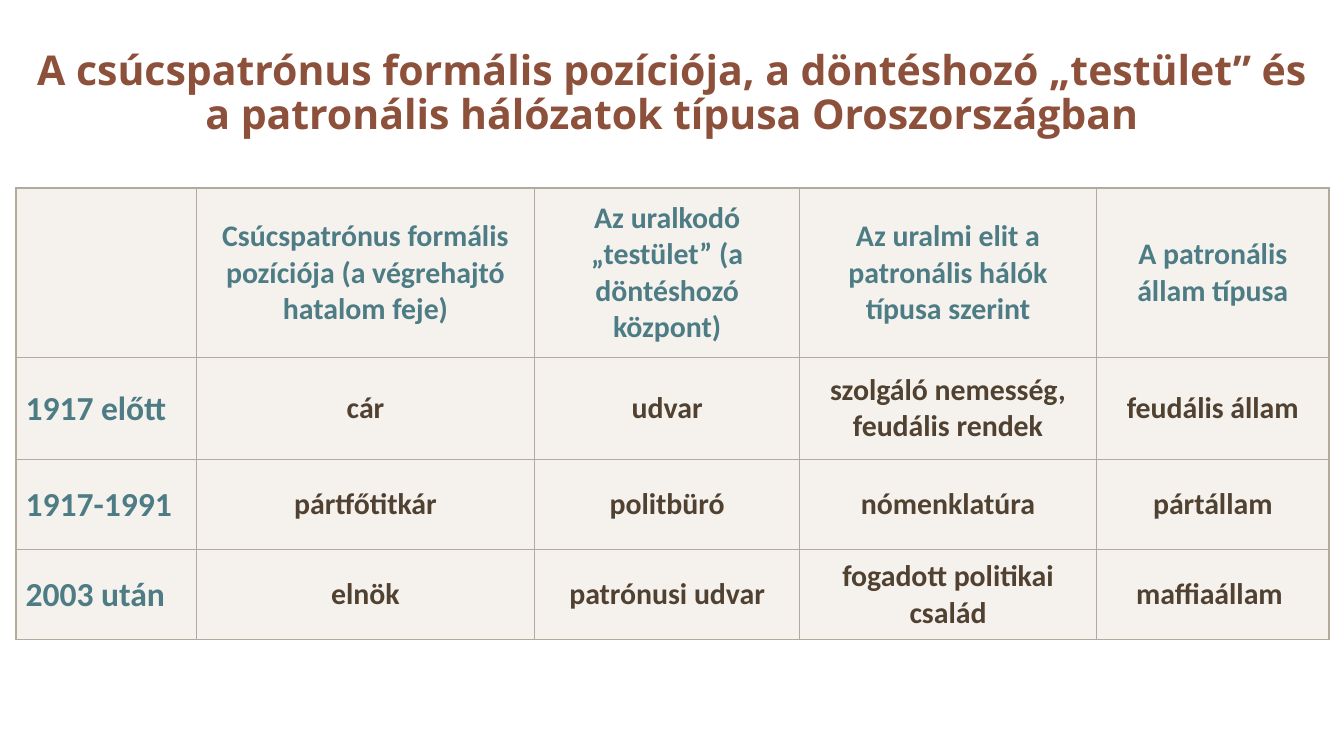
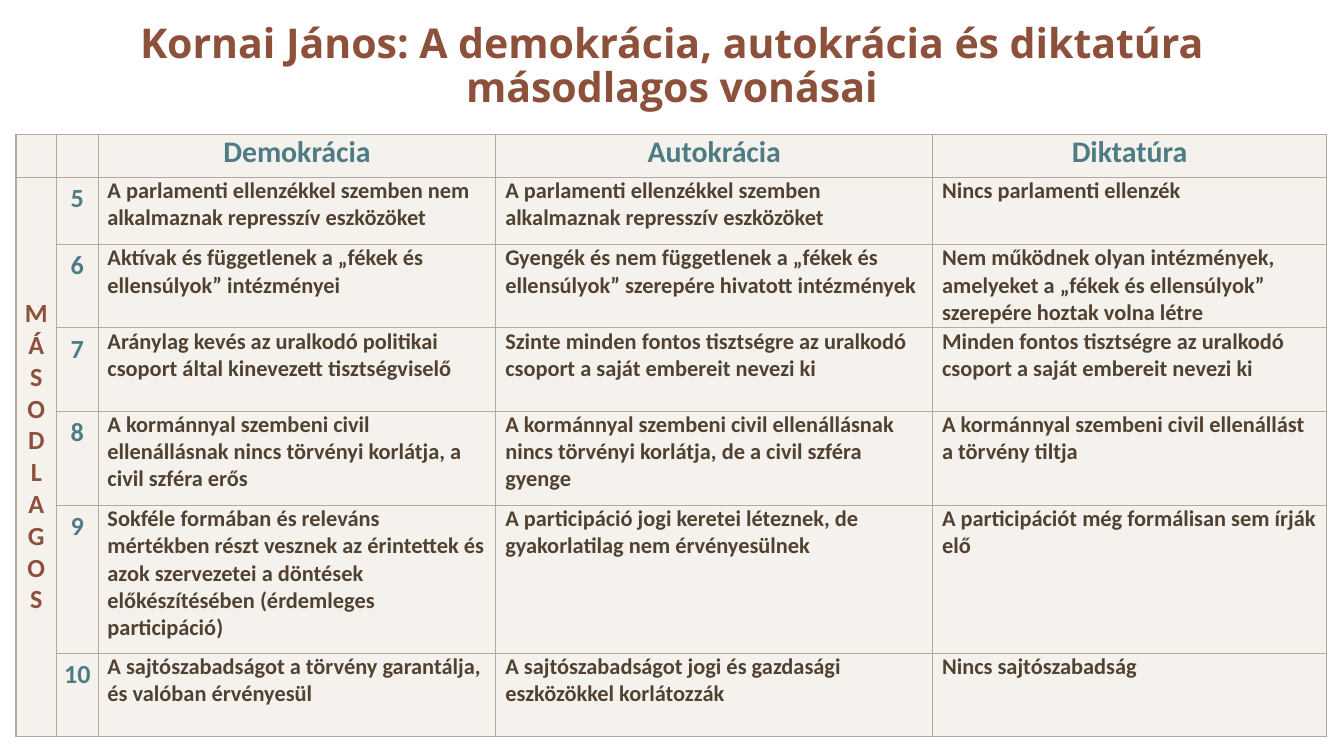
"""Build two slides that compare forms of rule in tables."""
from lxml.etree import SubElement as Sub
from pptx import Presentation as Deck
from pptx.dml.color import RGBColor as Rgb
from pptx.enum.text import MSO_ANCHOR as Anchor, PP_ALIGN as Align
from pptx.oxml.ns import qn
from pptx.util import Inches, Pt

HUES = {"title": "8D503B", "head": "4D7C84", "body": "504131", "fill": "EFEAE4", "edge": "B3AA9D"}
WIDE, HIGH = 100, 56.25
SIDE = 1.2


def unit(steps):
    """Turn grid steps of a tenth of an inch into a length."""
    return Inches(steps / 10)


def write(frame, text, size=16, hue="body", font="Calibri", align=Align.CENTER, lead=None):
    """Fill a text frame, one paragraph for each line."""
    for i, line in enumerate(text.split("\n")):
        para = frame.add_paragraph() if i else frame.paragraphs[0]
        para.alignment = align
        if lead:
            para.line_spacing = lead
        run = para.add_run()
        run.text = line
        run.font.name, run.font.size, run.font.bold = font, Pt(size), True
        run.font.color.rgb = Rgb.from_string(HUES[hue])


class Page:
    """Hold the deck's style and the current slide."""

    def __init__(self, deck):
        self.deck = deck
        self.slide = None

    def start(self):
        """Open a blank slide."""
        self.slide = self.deck.slides.add_slide(self.deck.slide_layouts[6])

    def title(self, text, high):
        """Set a centred title in a band at the top."""
        box = self.slide.shapes.add_textbox(unit(SIDE), 0, unit(WIDE - 2 * SIDE), unit(high))
        frame = box.text_frame
        frame.word_wrap = True
        frame.vertical_anchor = Anchor.MIDDLE
        write(frame, text, size=22, hue="title", font="Open Sans", lead=0.9)

    def table(self, top, cols, rows, data, look, span=None):
        """Draw a table whose cells take their format from look."""
        shape = self.slide.shapes.add_table(len(rows), len(cols), unit(SIDE), unit(top),
                                            unit(sum(cols)), unit(sum(rows)))
        table = shape.table
        table.first_row = table.horz_banding = False
        for col, wide in zip(table.columns, cols):
            col.width = unit(wide)
        for row, high in zip(table.rows, rows):
            row.height = unit(high)
        if span:
            table.cell(*span[0]).merge(table.cell(*span[1]))
        for r, line in enumerate(data):
            for c, text in enumerate(line):
                cell = table.cell(r, c)
                end = r + (cell.span_height if cell.is_merge_origin else 1)
                self.edge(cell, L=c == 0, R=c + 1 == len(cols), T=r == 0, B=end == len(rows))
                self.fill(cell)
                self.cell(cell, text, **look(r, c))

    def edge(self, cell, **outer):
        """Rule the four sides, heavier on the outside."""
        props = cell._tc.get_or_add_tcPr()
        for side, thick in outer.items():
            line = Sub(props, qn("a:ln" + side), w=str(Pt(1 if thick else 0.5)))
            Sub(Sub(line, qn("a:solidFill")), qn("a:srgbClr"), val=HUES["edge"])

    def fill(self, cell):
        """Tint a cell with a partly clear colour."""
        cell.fill.solid()
        cell.fill.fore_color.rgb = Rgb.from_string(HUES["fill"])
        tint = cell._tc.tcPr.find(qn("a:solidFill")).find(qn("a:srgbClr"))
        Sub(tint, qn("a:alpha"), val="60000")

    def cell(self, cell, text, anchor=Anchor.TOP, pad=0.7, drop=0, **form):
        """Set the insets and the words of a cell."""
        cell.margin_left = cell.margin_right = unit(pad)
        cell.margin_top, cell.margin_bottom = unit(drop), 0
        cell.vertical_anchor = anchor
        if text:
            write(cell.text_frame, text, **form)


def patron(r, c):
    """Give the format of a cell in the patron table."""
    form = {"anchor": Anchor.MIDDLE, "hue": "body" if r and c else "head"}
    if c == 0:
        form.update(size=18, align=Align.JUSTIFY)
    return form


def trait(r, c):
    """Give the format of a cell in the trait table."""
    if r == 0:
        return {"hue": "head"}
    if c == 0:
        return {"size": 14, "hue": "title", "pad": 0.3, "anchor": Anchor.MIDDLE}
    if c == 1:
        return {"size": 14, "hue": "head", "pad": 0.3, "drop": 0.4}
    return {"size": 12, "align": Align.LEFT}


POSTS = [
    ["", "Csúcspatrónus formális pozíciója (a végrehajtó hatalom feje)",
     "Az uralkodó „testület” (a döntéshozó központ)",
     "Az uralmi elit a patronális hálók típusa szerint", "A patronális állam típusa"],
    ["1917 előtt", "cár", "udvar", "szolgáló nemesség, feudális rendek", "feudális állam"],
    ["1917-1991", "pártfőtitkár", "politbüró", "nómenklatúra", "pártállam"],
    ["2003 után", "elnök", "patrónusi udvar", "fogadott politikai család", "maffiaállam "],
]

TRAITS = [
    ["A parlamenti ellenzékkel szemben nem alkalmaznak represszív eszközöket",
     "A parlamenti ellenzékkel szemben alkalmaznak represszív eszközöket",
     "Nincs parlamenti ellenzék"],
    ["Aktívak és függetlenek a „fékek és ellensúlyok” intézményei",
     "Gyengék és nem függetlenek a „fékek és ellensúlyok” szerepére hivatott intézmények",
     "Nem működnek olyan intézmények, amelyeket a „fékek és ellensúlyok” szerepére hoztak volna létre"],
    ["Aránylag kevés az uralkodó politikai csoport által kinevezett tisztségviselő",
     "Szinte minden fontos tisztségre az uralkodó csoport a saját embereit nevezi ki",
     "Minden fontos tisztségre az uralkodó csoport a saját embereit nevezi ki"],
    ["A kormánnyal szembeni civil ellenállásnak nincs törvényi korlátja, a civil szféra erős",
     "A kormánnyal szembeni civil ellenállásnak nincs törvényi korlátja, de a civil szféra gyenge",
     "A kormánnyal szembeni civil ellenállást a törvény tiltja"],
    ["Sokféle formában és releváns mértékben részt vesznek az érintettek és azok szervezetei "
     "a döntések előkészítésében (érdemleges participáció)",
     "A participáció jogi keretei léteznek, de gyakorlatilag nem érvényesülnek",
     "A participációt még formálisan sem írják elő"],
    ["A sajtószabadságot a törvény garantálja, és valóban érvényesül",
     "A sajtószabadságot jogi és gazdasági eszközökkel korlátozzák",
     "Nincs sajtószabadság"],
]


def main():
    """Build both slides and save the deck."""
    deck = Deck()
    deck.slide_width, deck.slide_height = unit(WIDE), unit(HIGH)
    page = Page(deck)

    page.start()
    page.title("A csúcspatrónus formális pozíciója, a döntéshozó „testület” és "
               "a patronális hálózatok típusa Oroszországban", 14)
    page.table(14, [13.4, 25.2, 19.7, 22.1, 17.3], [12.6, 7.6, 6.7, 6.7], POSTS, patron)

    page.start()
    page.title("Kornai János: A demokrácia, autokrácia és diktatúra másodlagos vonásai", 10)
    data = [["", "", "Demokrácia", "Autokrácia", "Diktatúra"]]
    for i, line in enumerate(TRAITS):
        data.append(["" if i else "\n".join("MÁSODLAGOS"), str(i + 5), *line])
    page.table(10, [3, 3.1, 29.6, 32.5, 29.3], [3.2, 5, 6.2, 6.2, 7, 11, 6.2],
               data, trait, span=((1, 0), (6, 0)))

    deck.save("out.pptx")


if __name__ == "__main__":
    main()
